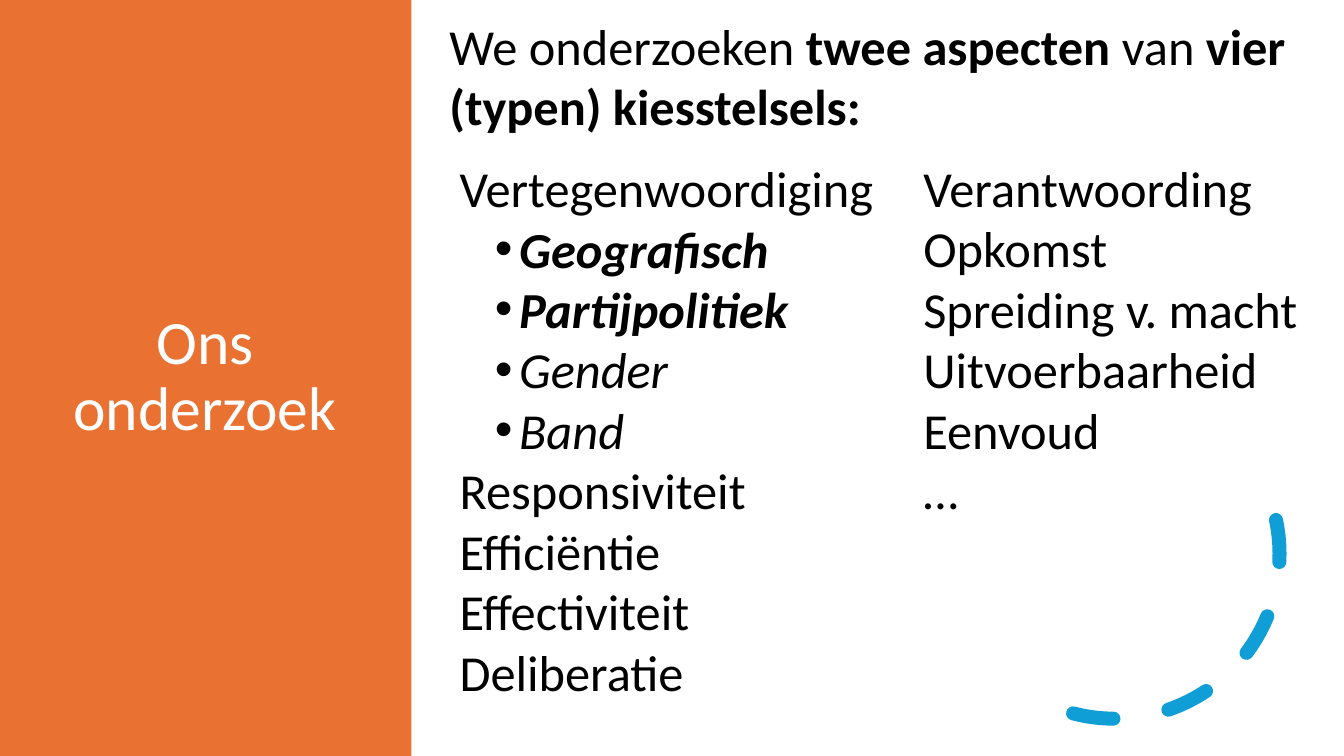
from lxml import etree
from pptx import Presentation
from pptx.dml.color import RGBColor
from pptx.enum.dml import MSO_LINE
from pptx.enum.shapes import MSO_SHAPE
from pptx.enum.text import MSO_ANCHOR, PP_ALIGN
from pptx.oxml.ns import qn
from pptx.util import Inches, Pt

RECTANGLE, ARC = MSO_SHAPE.RECTANGLE, MSO_SHAPE.ARC
DASH = MSO_LINE.DASH
CENTER, LEFT = PP_ALIGN.CENTER, PP_ALIGN.LEFT
TOP, MIDDLE = MSO_ANCHOR.TOP, MSO_ANCHOR.MIDDLE

COLORS = {"panel": "E97132", "arc": "0F9ED5", "title": "FFFFFF", "body": "000000"}


def add_run(paragraph, text, size=36, color="body", bold=False, italic=False):
    run = paragraph.add_run()
    run.text = text
    run.font.name = "Calibri"
    run.font.size = Pt(size)
    run.font.bold = bold
    run.font.italic = italic
    run.font.color.rgb = RGBColor.from_string(COLORS[color])


class SlideBuilder:
    def __init__(self, slide):
        self.slide = slide

    def shape(self, preset, left, top, width, height):
        shape = self.slide.shapes.add_shape(
            preset, Inches(left), Inches(top), Inches(width), Inches(height))
        shape.shadow.inherit = False
        return shape

    def panel(self, left, top, width, height, color):
        panel = self.shape(RECTANGLE, left, top, width, height)
        panel.fill.solid()
        panel.fill.fore_color.rgb = RGBColor.from_string(COLORS[color])
        panel.line.fill.background()

    def dashed_arc(self, left, top, size, rotation, start, end, color, weight):
        arc = self.shape(ARC, left, top, size, size)
        arc.rotation = rotation
        arc.adjustments[0], arc.adjustments[1] = start, end
        arc.fill.background()
        arc.line.color.rgb = RGBColor.from_string(COLORS[color])
        arc.line.width = Pt(weight)
        arc.line.dash_style = DASH
        arc.line._ln.set("cap", "rnd")

    def text(self, left, top, width, height, paragraphs,
             align=LEFT, anchor=TOP, spacing=1.0):
        frame = self.slide.shapes.add_textbox(
            Inches(left), Inches(top), Inches(width), Inches(height)).text_frame
        frame.word_wrap = True
        frame.vertical_anchor = anchor
        for index, (runs, bulleted) in enumerate(paragraphs):
            paragraph = frame.add_paragraph() if index else frame.paragraphs[0]
            paragraph.alignment = align
            paragraph.line_spacing = spacing
            if bulleted:
                self.bullet(paragraph)
            for words, style in runs:
                add_run(paragraph, words, **style)

    def bullet(self, paragraph):
        properties = paragraph._p.get_or_add_pPr()
        properties.set("marL", str(Inches(0.59)))
        properties.set("indent", str(Inches(-0.24)))
        etree.SubElement(properties, qn("a:buFont")).set("typeface", "Arial")
        etree.SubElement(properties, qn("a:buChar")).set("char", "•")


def plain(*lines):
    return [([(line, {})], False) for line in lines]


def bullets(*lines, **style):
    return [([(line, style)], True) for line in lines]


def main():
    presentation = Presentation()
    presentation.slide_width = Inches(13.33)
    presentation.slide_height = Inches(7.5)
    builder = SlideBuilder(presentation.slides.add_slide(presentation.slide_layouts[6]))

    builder.panel(0, 0, 4.08, 7.5, "panel")
    builder.dashed_arc(9.42, 3.86, 3.27, 104.6, 146.13, 0, "arc", 10)

    title = [([("Ons onderzoek", {"size": 44, "color": "title"})], False)]
    builder.text(0.42, 0.7, 3.23, 6.09, title, CENTER, MIDDLE, 0.9)

    representation = (
        plain("Vertegenwoordiging")
        + bullets("Geografisch", "Partijpolitiek", bold=True, italic=True)
        + bullets("Gender", "Band", italic=True)
        + plain("Responsiviteit", "Efficiëntie", "Effectiviteit", "Deliberatie"))
    builder.text(4.46, 1.51, 4.46, 5.55, representation)

    accountability = plain("Verantwoording", "Opkomst", "Spreiding v. macht",
                           "Uitvoerbaarheid", "Eenvoud", "…")
    builder.text(9.06, 1.51, 4.27, 3.74, accountability)

    introduction = [("We onderzoeken ", {}), ("twee aspecten ", {"bold": True}),
                    ("van ", {}), ("vier (typen) kiesstelsels:", {"bold": True})]
    builder.text(4.36, 0.1, 8.84, 1.31, [(introduction, False)])

    presentation.save("out.pptx")


if __name__ == "__main__":
    main()
